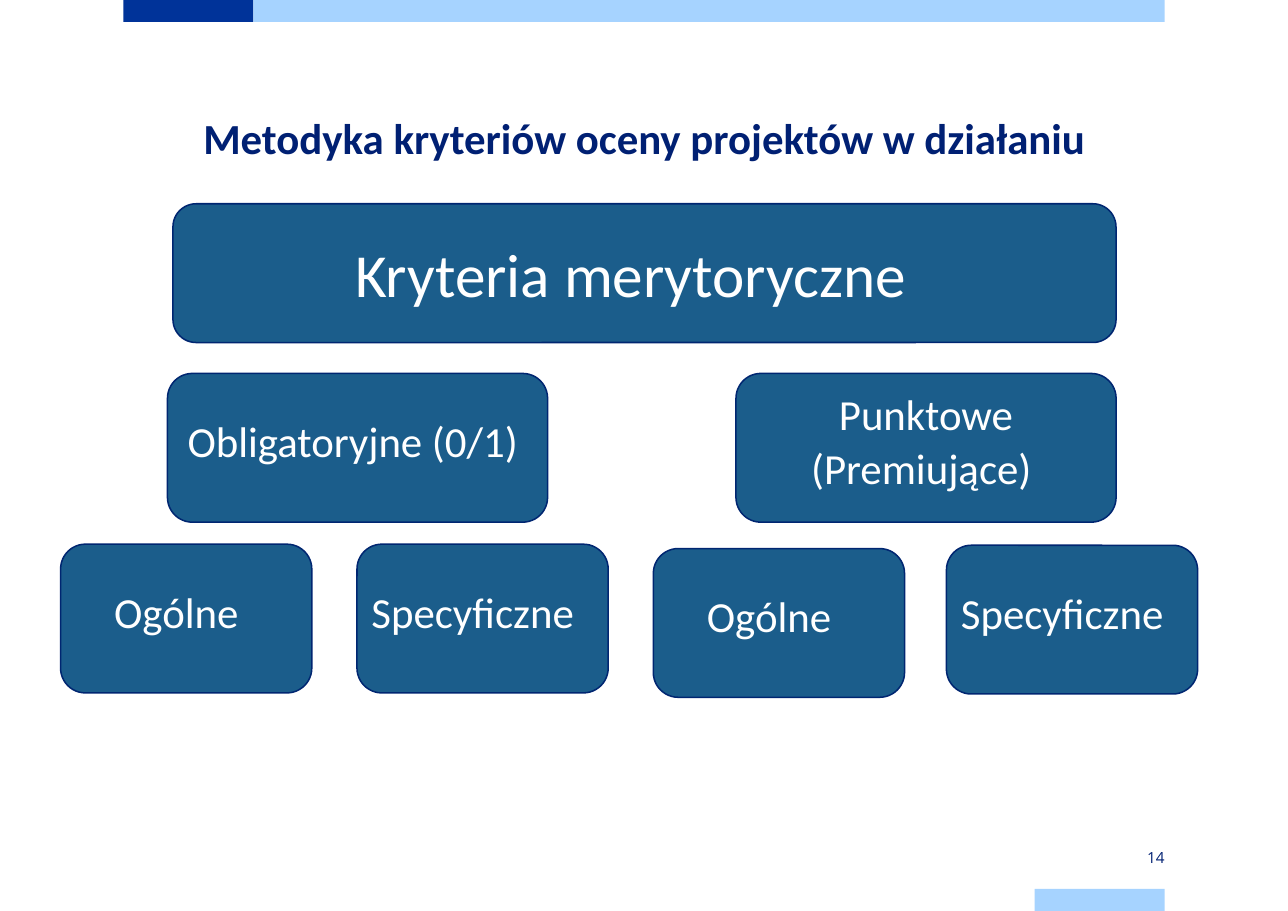
from dataclasses import dataclass

from pptx import Presentation
from pptx.dml.color import RGBColor
from pptx.enum.shapes import MSO_SHAPE
from pptx.enum.text import MSO_ANCHOR, PP_ALIGN
from pptx.util import Pt

SCALE = 9144  # EMU in one px, 100 px to the inch


@dataclass(frozen=True)
class Theme:
    navy: str = "002073"
    royal: str = "003399"
    sky: str = "A6D3FF"
    box_fill: str = "1B5D8B"
    box_line: str = "002671"
    white: str = "FFFFFF"
    heading_size: int = 40
    text_size: int = 28
    number_size: int = 10
    font: str = "Calibri"
    number_font: str = "Open Sans"


def write_text(frame, text, *, size, color, font, bold=False, align=PP_ALIGN.CENTER,
               anchor=MSO_ANCHOR.MIDDLE, leading=None, gap=0, right=0):
    """Fill a text frame, one paragraph for each line of the text."""
    frame.word_wrap = True
    frame.vertical_anchor = anchor
    frame.margin_left = frame.margin_top = frame.margin_bottom = 0
    frame.margin_right = right * SCALE
    for index, line in enumerate(text.split("\n")):
        para = frame.add_paragraph() if index else frame.paragraphs[0]
        para.alignment = align
        para.space_before = Pt(gap if index else 0)
        if leading:
            para.line_spacing = Pt(leading)
        span = para.add_run()
        span.text = line
        span.font.name = font
        span.font.size = Pt(size)
        span.font.bold = bold
        span.font.color.rgb = RGBColor.from_string(color)


class SlideBuilder:
    def __init__(self, slide, theme):
        self.slide = slide
        self.theme = theme

    def shape(self, kind, place, fill, line=None):
        shape = self.slide.shapes.add_shape(kind, *(value * SCALE for value in place))
        shape.shadow.inherit = False
        shape.fill.solid()
        shape.fill.fore_color.rgb = RGBColor.from_string(fill)
        if line:
            shape.line.color.rgb = RGBColor.from_string(line)
            shape.line.width = Pt(1)
        else:
            shape.line.fill.background()
        return shape

    def bar(self, place, fill):
        self.shape(MSO_SHAPE.RECTANGLE, place, fill)

    def box(self, place, text, **text_format):
        theme = self.theme
        box = self.shape(MSO_SHAPE.ROUNDED_RECTANGLE, place, theme.box_fill, theme.box_line)
        style = dict(size=theme.text_size, color=theme.white, font=theme.font,
                     leading=24, gap=11)
        write_text(box.text_frame, text, **(style | text_format))

    def label(self, place, text, **text_format):
        label = self.slide.shapes.add_textbox(*(value * SCALE for value in place))
        write_text(label.text_frame, text, color=self.theme.navy, **text_format)


def main():
    deck = Presentation()
    deck.slide_width = 1169 * SCALE
    deck.slide_height = 827 * SCALE
    theme = Theme()
    page = SlideBuilder(deck.slides.add_slide(deck.slide_layouts[6]), theme)

    # Edge bars
    page.bar((112, 0, 118, 20), theme.royal)
    page.bar((230, 0, 827, 20), theme.sky)
    page.bar((939, 807, 118, 20), theme.sky)

    # Title
    page.label((112, 98, 945, 118), "Metodyka kryteriów oceny projektów w działaniu",
               size=theme.text_size, font=theme.font, bold=True,
               anchor=MSO_ANCHOR.TOP, leading=36)

    # Criteria tree: root, two kinds, four groups
    page.box((157, 185, 856, 126), "Kryteria merytoryczne",
             size=theme.heading_size, leading=None, right=25)
    for left, text in ((152, "Obligatoryjne (0/1) "), (668, "Punktowe\n(Premiujące) ")):
        page.box((left, 339, 345, 135), text)
    groups = ((55, 494, "Ogólne"), (324, 494, "Specyficzne"),
              (593, 498, "Ogólne"), (859, 495, "Specyficzne"))
    for left, top, text in groups:
        page.box((left, top, 228, 135), text, right=18)

    # Page number
    page.label((939, 768, 118, 20), "14", size=theme.number_size,
               font=theme.number_font, align=PP_ALIGN.RIGHT)

    deck.save("out.pptx")


if __name__ == "__main__":
    main()
